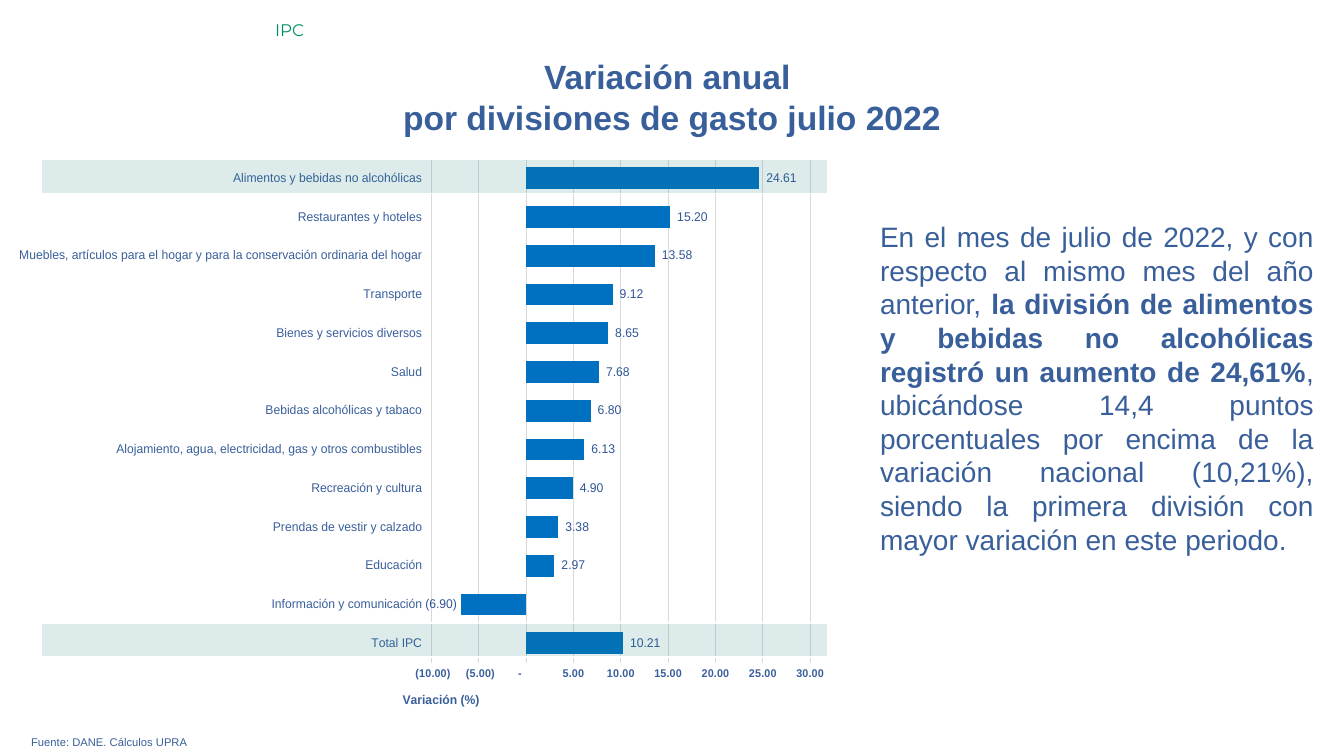
from lxml import etree
from pptx import Presentation
from pptx.chart.data import CategoryChartData
from pptx.dml.color import RGBColor
from pptx.enum.chart import XL_CHART_TYPE, XL_LABEL_POSITION, XL_TICK_LABEL_POSITION, XL_TICK_MARK
from pptx.enum.shapes import MSO_SHAPE
from pptx.enum.text import MSO_AUTO_SIZE, PP_ALIGN
from pptx.oxml.ns import qn
from pptx.util import Inches, Pt

BAR_CLUSTERED = XL_CHART_TYPE.BAR_CLUSTERED
OUTSIDE_END = XL_LABEL_POSITION.OUTSIDE_END
LOW = XL_TICK_LABEL_POSITION.LOW
NO_TICK = XL_TICK_MARK.NONE
RECTANGLE = MSO_SHAPE.RECTANGLE
GROW = MSO_AUTO_SIZE.SHAPE_TO_FIT_TEXT
LEFT, CENTER, JUSTIFY = PP_ALIGN.LEFT, PP_ALIGN.CENTER, PP_ALIGN.JUSTIFY

COLORS = {
    "text": "395F9B", "label": "2F5597", "bar": "0070C0", "grid": "D9D9D9",
    "section": "009267", "band": "117A76", "white": "FFFFFF", "black": "000000",
}
NUMBER_FORMAT = '_(* #,##0.00_);_(* \\(#,##0.00\\);_(* "-"??_);_(@_)'
DIVISIONS = [
    ("Total IPC", 10.21),
    ("Información y comunicación", -6.90),
    ("Educación", 2.97),
    ("Prendas de vestir y calzado", 3.38),
    ("Recreación y cultura", 4.90),
    ("Alojamiento, agua, electricidad, gas y otros combustibles", 6.13),
    ("Bebidas alcohólicas y tabaco", 6.80),
    ("Salud", 7.68),
    ("Bienes y servicios diversos", 8.65),
    ("Transporte", 9.12),
    ("Muebles, artículos para el hogar y para la conservación ordinaria del hogar", 13.58),
    ("Restaurantes y hoteles", 15.20),
    ("Alimentos y bebidas no alcohólicas", 24.61),
]


def color(name):
    return RGBColor.from_string(COLORS[name])


def style_font(font, size, color_name, bold=False, name="Arial"):
    font.name, font.size, font.bold = name, Pt(size), bold
    font.color.rgb = color(color_name)


def add_text(page, box, paragraphs, size, align, color_name="text", font_name="Arial"):
    """Add a text box; each paragraph is a list of (text, bold) spans."""
    frame = page.shapes.add_textbox(*map(Inches, box)).text_frame
    frame.word_wrap = True
    frame.auto_size = GROW
    for index, spans in enumerate(paragraphs):
        para = frame.paragraphs[0] if index == 0 else frame.add_paragraph()
        para.alignment = align
        for text, bold in spans:
            span = para.add_run()
            span.text = text
            style_font(span.font, size, color_name, bold, font_name)


def set_layout(parent, **settings):
    """Give a chart element a manual layout."""
    layout = parent.find(qn("c:layout"))
    if layout is None:
        layout = etree.Element(qn("c:layout"))
        parent.insert(0, layout)
    manual = etree.SubElement(layout, qn("c:manualLayout"))
    for tag, value in settings.items():
        etree.SubElement(manual, qn("c:" + tag)).set("val", str(value))


def style_axes(chart):
    category_axis, value_axis = chart.category_axis, chart.value_axis
    for axis, size, bold in ((category_axis, 9, False), (value_axis, 8, True)):
        axis.major_tick_mark = axis.minor_tick_mark = NO_TICK
        style_font(axis.tick_labels.font, size, "text", bold)
    category_axis.tick_label_position = LOW
    category_axis.format.line.color.rgb = color("grid")
    category_axis.format.line.width = Pt(0.75)

    value_axis.minimum_scale, value_axis.maximum_scale = -10, 30
    value_axis.major_unit = 5
    value_axis.format.line.fill.background()
    value_axis.tick_labels.number_format = NUMBER_FORMAT
    value_axis.tick_labels.number_format_is_linked = False
    grid_line = value_axis.major_gridlines.format.line
    grid_line.color.rgb = color("grid")
    grid_line.width = Pt(0.75)

    title = value_axis.axis_title
    title.text_frame.text = "Variación (%)"
    style_font(title.text_frame.paragraphs[0].runs[0].font, 9, "text", True)
    set_layout(title._element, xMode="edge", yMode="edge", x=0.45, y=0.95)


def add_division_chart(page, box):
    data = CategoryChartData(number_format="0.00")
    data.categories = [name for name, _ in DIVISIONS]
    data.add_series("Variación anual", [value for _, value in DIVISIONS])
    chart = page.shapes.add_chart(BAR_CLUSTERED, *map(Inches, box), data).chart
    chart.has_legend = chart.has_title = False
    style_font(chart.font, 10.5, "black")
    style_axes(chart)

    plot = chart.plots[0]
    plot.gap_width = 79
    plot.vary_by_categories = False
    series = plot.series[0]
    series.invert_if_negative = False
    series.format.fill.solid()
    series.format.fill.fore_color.rgb = color("bar")
    labels = series.data_labels
    labels.show_value = True
    labels.position = OUTSIDE_END
    labels.number_format = NUMBER_FORMAT
    labels.number_format_is_linked = False
    style_font(labels.font, 9, "label")
    plot_area = chart._chartSpace.chart.plotArea
    set_layout(plot_area, layoutTarget="inner", xMode="edge", yMode="edge",
               x=0.49, y=0.036, w=0.485, h=0.869)


def add_highlight(page, box):
    """Add a translucent band over one row of the chart."""
    band = page.shapes.add_shape(RECTANGLE, *map(Inches, box))
    band.shadow.inherit = False
    band.fill.solid()
    band.fill.fore_color.rgb = color("band")
    band_color = band.fill._xPr.find(qn("a:solidFill"))[0]
    etree.SubElement(band_color, qn("a:alpha")).set("val", "14000")
    band.line.color.rgb = color("white")
    band.line.width = Pt(1)


def build_slide(deck):
    page = deck.slides.add_slide(deck.slide_layouts[6])
    add_division_chart(page, (0.19, 1.37, 8.04, 5.75))
    add_text(page, (1.38, 0.51, 10.57, 0.91),
             [[("Variación anual ", True)], [("por divisiones de gasto julio 2022", True)]],
             24, CENTER)
    add_text(page, (8.63, 2.13, 4.5, 3.47), [[
        ("En el mes de julio de 2022, y con respecto al mismo mes del año anterior, ", False),
        ("la división de alimentos y bebidas no alcohólicas registró un aumento de 24,61%", True),
        (", ubicándose 14,4 puntos porcentuales por encima de la variación nacional (10,21%), "
         "siendo la primera división con mayor variación en este periodo.", False),
    ]], 20, JUSTIFY)
    add_text(page, (2.63, 0.15, 10.7, 0.3), [[("IPC", False)]], 12, LEFT, "section", "Montserrat")
    add_text(page, (0.21, 7.25, 12.91, 0.24), [[("Fuente: DANE. Cálculos UPRA", False)]], 8, JUSTIFY)
    for top in (1.58, 6.18):
        add_highlight(page, (0.41, top, 7.8, 0.34))


def main():
    deck = Presentation()
    deck.slide_width, deck.slide_height = Inches(13.33), Inches(7.5)
    build_slide(deck)
    deck.save("out.pptx")


if __name__ == "__main__":
    main()
